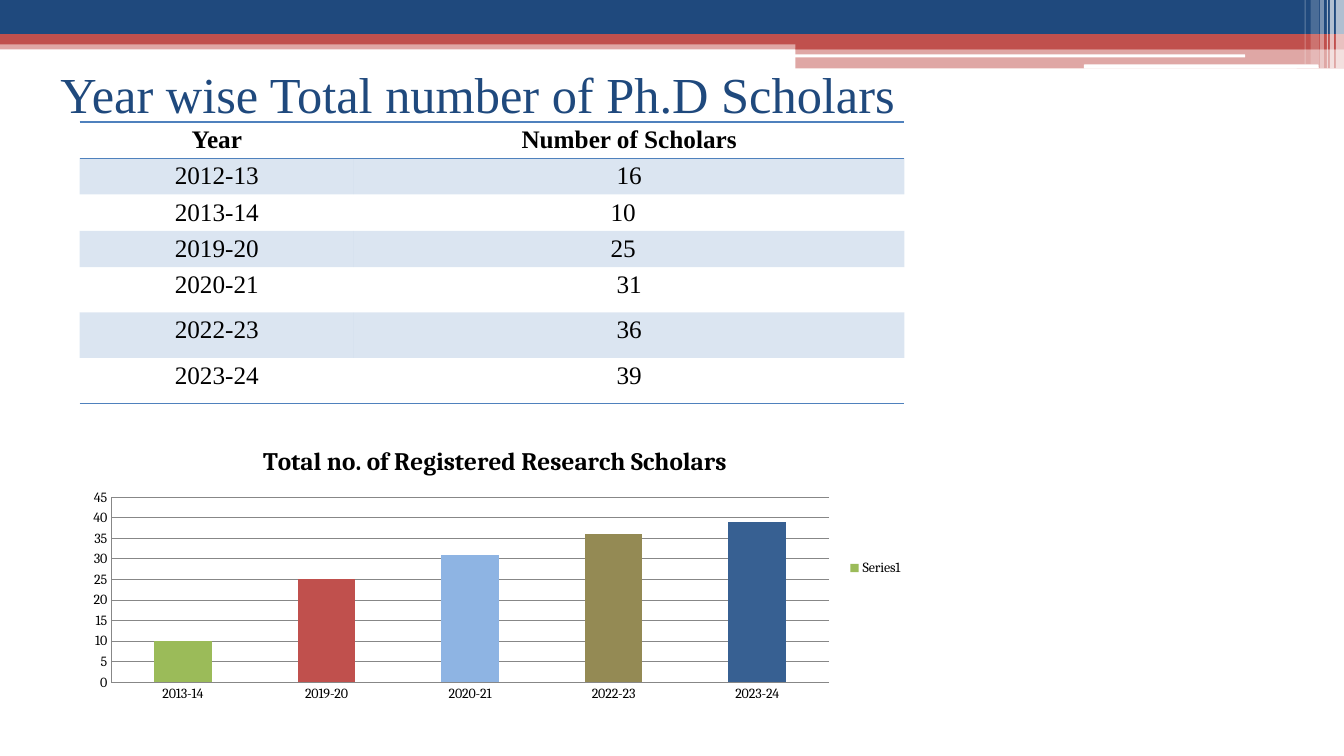
from dataclasses import dataclass

from lxml import etree
from pptx import Presentation
from pptx import util as u
from pptx.chart import data as cd
from pptx.dml import color as dc
from pptx.enum import chart as ch
from pptx.enum import shapes as sh
from pptx.enum import text as tx
from pptx.oxml import ns

HUES = {
    "navy": "1F497D", "red": "C0504D", "white": "FFFFFF", "black": "000000",
    "blue": "4F81BD", "grey": "878787", "green": "9BBB59", "sky": "8EB4E3",
    "olive": "948A54", "steel": "376092",
}
SERIF = "Times New Roman"
PLAIN = "{2D5ABB26-0587-4C30-8999-92F81FD0307C}"  # table style without grid


@dataclass
class Band:
    x: float
    y: float
    w: float
    h: float
    hue: str
    alpha: int = 100
    rounded: bool = False


@dataclass
class Row:
    year: str
    count: str
    high: float = 0.36
    right: float = 0.1


BANDS = [
    Band(0, 0.4, 13.33, 0.09, "red", 50),
    Band(0, 0, 13.33, 0.34, "navy"),
    Band(0, 0.34, 13.33, 0.1, "red"),
    Band(7.89, 0.39, 5.44, 0.1, "red"),
    Band(7.89, 0.48, 5.44, 0.2, "red", 50),
    Band(7.88, 0.54, 4.47, 0.03, "white", rounded=True),
    Band(10.75, 0.64, 2.33, 0.04, "white", rounded=True),
    Band(13.25, 0, 0.08, 0.68, "white", 65),
    Band(13.19, 0, 0.04, 0.68, "white", 65),
    Band(13.16, 0, 0.01, 0.68, "white", 60),
    Band(13.09, 0, 0.04, 0.68, "white", 40),
    Band(13, 0, 0.08, 0.64, "white", 20),
    Band(12.94, 0, 0.01, 0.64, "white", 30),
]
ROWS = [
    Row("Year", "Number of Scholars"),
    Row("2012-13", "16"),
    Row("2013-14", "10", right=0.22),
    Row("2019-20", "25", right=0.22),
    Row("2020-21", "31", 0.45),
    Row("2022-23", "36", 0.45),
    Row("2023-24", "39", 0.45),
]
BARS = ["green", "red", "sky", "olive", "steel"]


def rgb(hue: str) -> dc.RGBColor:
    return dc.RGBColor.from_string(HUES[hue])


def paint(fill, hue: str, alpha: int = 100) -> None:
    fill.solid()
    fill.fore_color.rgb = rgb(hue)
    if alpha < 100:
        tint = fill._xPr.find(".//" + ns.qn("a:srgbClr"))
        etree.SubElement(tint, ns.qn("a:alpha"), val=str(alpha * 1000))


def style(font, size: float, face: str, hue: str = "black", bold: bool = False) -> None:
    font.size, font.name, font.bold = u.Pt(size), face, bold
    font.color.rgb = rgb(hue)


def write(frame, words: str, *, size: float, face: str = SERIF, hue: str = "black",
          bold: bool = False, align=tx.PP_ALIGN.CENTER) -> None:
    para = frame.paragraphs[0]
    para.alignment = align
    run = para.add_run()
    run.text = words
    style(run.font, size, face, hue, bold)


def rule(cell, side: str) -> None:
    line = etree.SubElement(cell._tc.get_or_add_tcPr(), ns.qn("a:" + side), w="12700")
    fill = etree.SubElement(line, ns.qn("a:solidFill"))
    etree.SubElement(fill, ns.qn("a:srgbClr"), val=HUES["blue"])


def draw_band(slide, band: Band) -> None:
    kind = sh.MSO_SHAPE.ROUNDED_RECTANGLE if band.rounded else sh.MSO_SHAPE.RECTANGLE
    box = [u.Inches(n) for n in (band.x, band.y, band.w, band.h)]
    shape = slide.shapes.add_shape(kind, *box)
    shape.shadow.inherit = False
    shape.line.fill.background()
    paint(shape.fill, band.hue, band.alpha)


def draw_title(slide) -> None:
    title = slide.shapes.title
    title.left, title.top = u.Inches(0.5), u.Inches(0.34)
    title.width, title.height = u.Inches(12), u.Inches(1.17)
    title.text_frame.vertical_anchor = tx.MSO_ANCHOR.MIDDLE
    write(title.text_frame, "Year wise Total number of Ph.D Scholars",
          size=36, hue="navy", align=tx.PP_ALIGN.LEFT)
    slide.shapes._spTree.append(title._element)  # in front of the bands


def draw_table(slide) -> None:
    high = sum(row.high for row in ROWS)
    table = slide.shapes.add_table(len(ROWS), 2, u.Inches(0.79), u.Inches(1.21),
                                   u.Inches(8.18), u.Inches(high)).table
    table._tbl.tblPr.find(ns.qn("a:tableStyleId")).text = PLAIN
    table.horz_banding = False
    for col, wide in zip(table.columns, (2.72, 5.46)):
        col.width = u.Inches(wide)
    for i, row in enumerate(ROWS):
        table.rows[i].height = u.Inches(row.high)
        for j, words in enumerate((row.year, row.count)):
            cell = table.cell(i, j)
            cell.margin_top = cell.margin_bottom = u.Inches(0.04)
            cell.margin_left = u.Inches(0.1)
            cell.margin_right = u.Inches(row.right if j else 0.1)
            write(cell.text_frame, words, size=18, bold=i == 0)
            if i == 0:
                rule(cell, "lnT")
            if i in (0, len(ROWS) - 1):
                rule(cell, "lnB")
            if i % 2:
                paint(cell.fill, "blue", 20)
            else:
                cell.fill.background()


def draw_chart(slide) -> None:
    data = cd.CategoryChartData()
    data.categories = [row.year for row in ROWS[2:]]
    data.add_series("Series1", [int(row.count) for row in ROWS[2:]])
    chart = slide.shapes.add_chart(
        ch.XL_CHART_TYPE.COLUMN_CLUSTERED, u.Inches(0.76), u.Inches(4.25),
        u.Inches(8.3), u.Inches(2.77), data).chart
    style(chart.font, 10, "Cambria")
    chart.has_title = True
    write(chart.chart_title.text_frame, "Total no. of Registered Research Scholars",
          size=18, face="Cambria", bold=True)
    chart.has_legend = True
    chart.legend.position = ch.XL_LEGEND_POSITION.RIGHT
    chart.legend.include_in_layout = False

    # Axes
    for axis in (chart.category_axis, chart.value_axis):
        axis.major_tick_mark = axis.minor_tick_mark = ch.XL_TICK_MARK.NONE
        axis.format.line.color.rgb = rgb("grey")
    scale = chart.value_axis
    scale.minimum_scale, scale.maximum_scale, scale.major_unit = 0, 45, 5
    scale.has_major_gridlines = True
    scale.major_gridlines.format.line.color.rgb = rgb("grey")

    # Bars
    plot = chart.plots[0]
    plot.vary_by_categories = False
    plot.gap_width = 150
    bars = plot.series[0]
    paint(bars.format.fill, BARS[0])
    for i, hue in enumerate(BARS[1:], 1):
        paint(bars.points[i].format.fill, hue)


def main() -> None:
    deck = Presentation()
    deck.slide_width, deck.slide_height = u.Inches(13.33), u.Inches(7.5)
    slide = deck.slides.add_slide(deck.slide_layouts[5])
    for band in BANDS:
        draw_band(slide, band)
    draw_title(slide)
    draw_table(slide)
    draw_chart(slide)
    deck.save("out.pptx")


if __name__ == "__main__":
    main()
